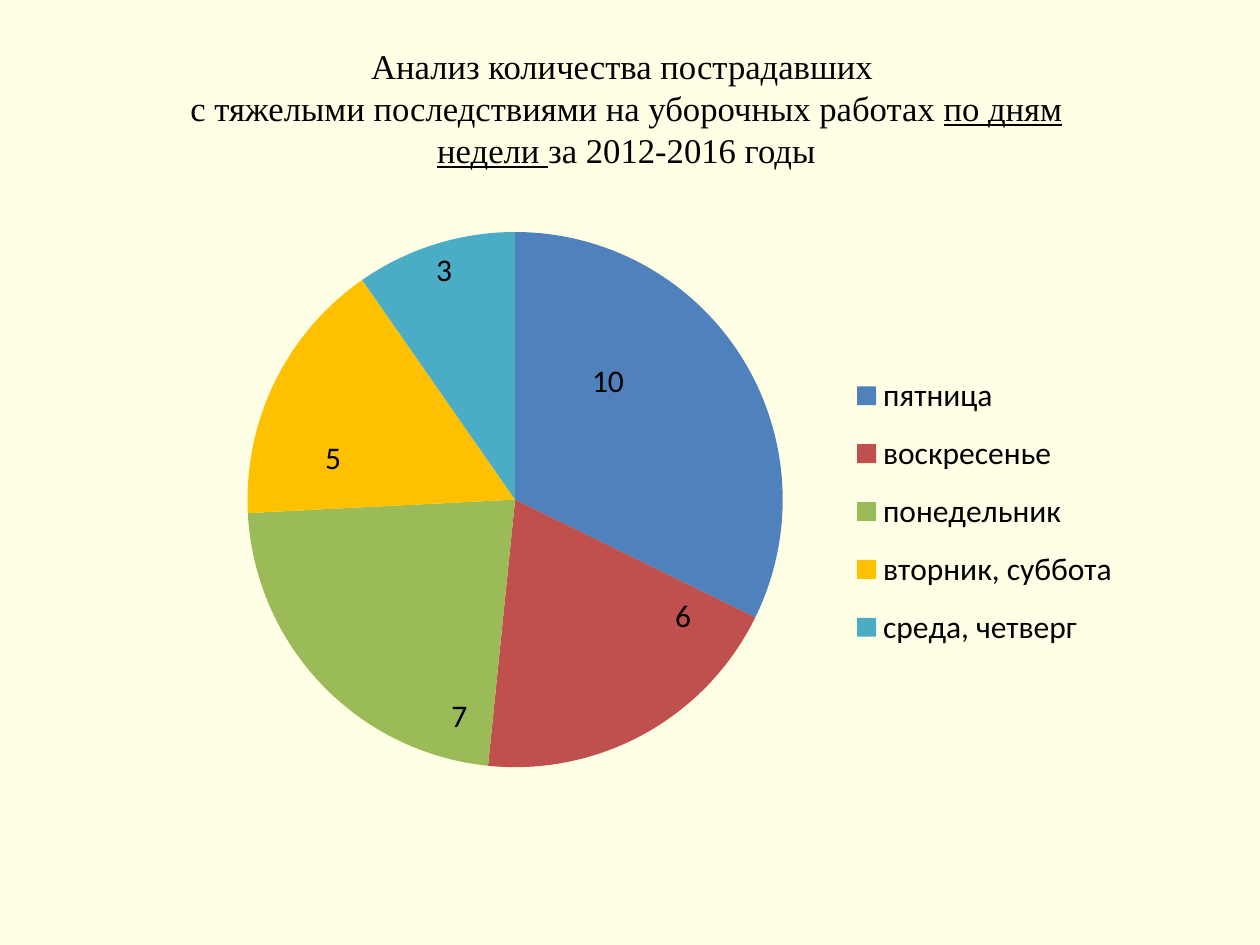
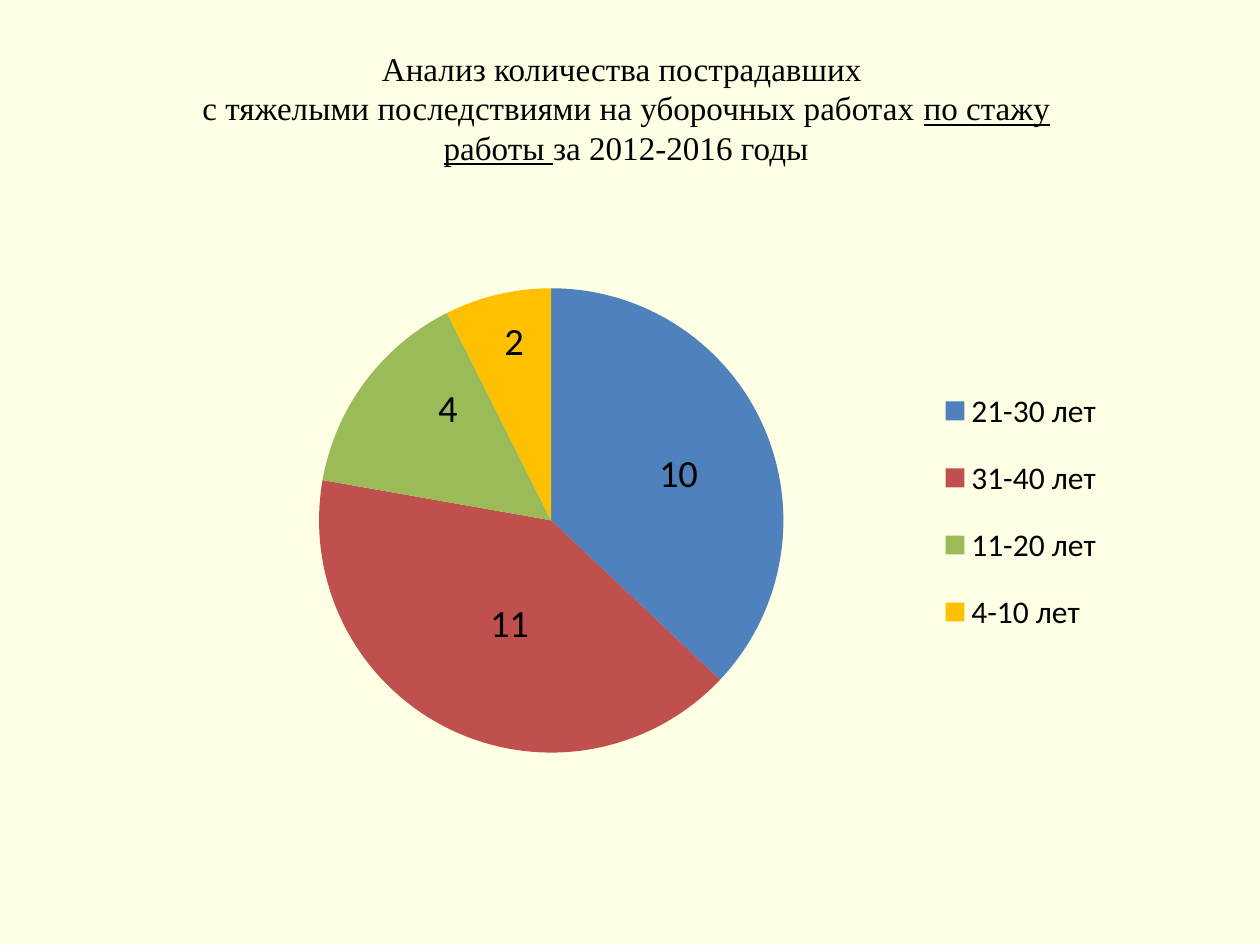
"""Build two slides with pie charts of injuries at harvest work."""
import dataclasses
import typing

import pptx
import pptx.chart.data
import pptx.dml.color
import pptx.enum.chart
import pptx.enum.text
import pptx.oxml
import pptx.oxml.ns
import pptx.util

Inches = pptx.util.Inches
Pt = pptx.util.Pt

COLORS = {"background": "FFFFE5", "text": "000000", "blue": "4F81BD", "red": "C0504D",
          "green": "9BBB59", "yellow": "FFC000", "aqua": "4BACC6"}
SLICE_COLORS = ("blue", "red", "green", "yellow", "aqua")
TITLE_START = "Анализ количества пострадавших \vс тяжелыми последствиями на уборочных работах "
TITLE_END = "за 2012-2016 годы"
TITLE_FONT = "Times New Roman"
CHART_FONT = "Calibri"
TITLE_BOX = (Inches(1.41), Inches(0.31), Inches(7.12), Inches(1.09))
CHART_BOX = (Inches(1.14), Inches(1.7), Inches(8.19), Inches(4.72))


@dataclasses.dataclass(frozen=True)
class Slice:
    """A pie slice and the shift of its label, as parts of the chart size."""
    name: str
    value: int
    dx: float = 0
    dy: float = 0


@dataclasses.dataclass(frozen=True)
class PieSlide:
    """What differs between slides; areas are x, y, w, h as parts of the chart."""
    topic: str
    title_size: float
    label_size: float
    plot_area: tuple[float, ...]
    legend_area: tuple[float, ...]
    slices: tuple[Slice, ...]


SLIDES = (
    PieSlide("по дням недели ", 19.8, 18, (0.1, 0.03, 0.52, 0.9), (0.68, 0.24, 0.27, 0.52), (
        Slice("пятница", 10, -0.02, -0.08),
        Slice("воскресенье", 6, 0.1, 0),
        Slice("понедельник", 7, 0.04, 0.21),
        Slice("вторник, суббота", 5, -0.06, 0.03),
        Slice("среда, четверг", 3, -0.03, -0.17))),
    PieSlide("по стажу работы ", 18.9, 22, (0.17, 0.12, 0.45, 0.79), (0.76, 0.25, 0.18, 0.5), (
        Slice("21-30 лет", 10, 0.02, 0),
        Slice("31-40 лет", 11, 0.01, 0),
        Slice("11-20 лет", 4, -0.01, -0.07),
        Slice("4-10 лет", 2, -0.01, -0.11))),
)


def rgb(name: str) -> pptx.dml.color.RGBColor:
    """Return a named colour."""
    return pptx.dml.color.RGBColor.from_string(COLORS[name])


def style_font(font: typing.Any, name: str, size: float) -> None:
    """Set typeface, size and text colour."""
    font.name, font.size = name, Pt(size)
    font.color.rgb = rgb("text")


def set_layout(parent: typing.Any, index: int, values: dict[str, typing.Any]) -> None:
    """Give a chart part a manual layout at the given child position."""
    for old in parent.findall(pptx.oxml.ns.qn("c:layout")):
        parent.remove(old)
    items = "".join(f'<c:{key} val="{value}"/>' for key, value in values.items())
    parent.insert(index, pptx.oxml.parse_xml(
        f'<c:layout {pptx.oxml.ns.nsdecls("c")}><c:manualLayout>{items}'
        '</c:manualLayout></c:layout>'))


def edge_layout(area: tuple[float, ...]) -> dict[str, typing.Any]:
    """Describe an area measured from the chart's top left corner."""
    return {"xMode": "edge", "yMode": "edge", **dict(zip("xywh", area))}


def add_title(s: typing.Any, page: PieSlide) -> None:
    """Add the centred title with its topic underlined."""
    tf = s.shapes.add_textbox(*TITLE_BOX).text_frame
    tf.word_wrap = True
    tf.vertical_anchor = pptx.enum.text.MSO_ANCHOR.MIDDLE
    p = tf.paragraphs[0]
    p.text = TITLE_START
    p.alignment = pptx.enum.text.PP_ALIGN.CENTER
    for text in (page.topic, TITLE_END):
        p.add_run().text = text
    for r in p.runs:
        style_font(r.font, TITLE_FONT, page.title_size)
        r.font.underline = r.text == page.topic


def add_pie(s: typing.Any, page: PieSlide) -> None:
    """Add the pie chart with its legend and value labels."""
    data = pptx.chart.data.CategoryChartData()
    data.categories = [piece.name for piece in page.slices]
    data.add_series("Series 1", [piece.value for piece in page.slices])
    chart = s.shapes.add_chart(pptx.enum.chart.XL_CHART_TYPE.PIE, *CHART_BOX, data).chart
    chart.has_title = False
    style_font(chart.font, CHART_FONT, 18)
    chart.has_legend = True
    chart.legend.position = pptx.enum.chart.XL_LEGEND_POSITION.RIGHT
    chart.legend.include_in_layout = False
    set_layout(chart.legend._element, 1, edge_layout(page.legend_area))
    plot = chart.plots[0]
    plot.vary_by_categories = True
    set_layout(plot._element.getparent(), 0,
               {"layoutTarget": "inner", **edge_layout(page.plot_area)})
    series = plot.series[0]
    series.data_labels.show_value = True
    for i, (piece, color) in enumerate(zip(page.slices, SLICE_COLORS)):
        point = series.points[i]
        point.format.fill.solid()
        point.format.fill.fore_color.rgb = rgb(color)
        label = point.data_label
        style_font(label.font, CHART_FONT, page.label_size)
        label.position = pptx.enum.chart.XL_LABEL_POSITION.CENTER
        set_layout(series.data_labels._element.dLbl_lst[i], 1, {"x": piece.dx, "y": piece.dy})


def main() -> None:
    """Create and save the presentation."""
    prs = pptx.Presentation()
    prs.slide_width, prs.slide_height = Inches(10), Inches(7.5)
    for page in SLIDES:
        s = prs.slides.add_slide(prs.slide_layouts[6])
        s.background.fill.solid()
        s.background.fill.fore_color.rgb = rgb("background")
        add_title(s, page)
        add_pie(s, page)
    prs.save("out.pptx")


if __name__ == "__main__":
    main()
